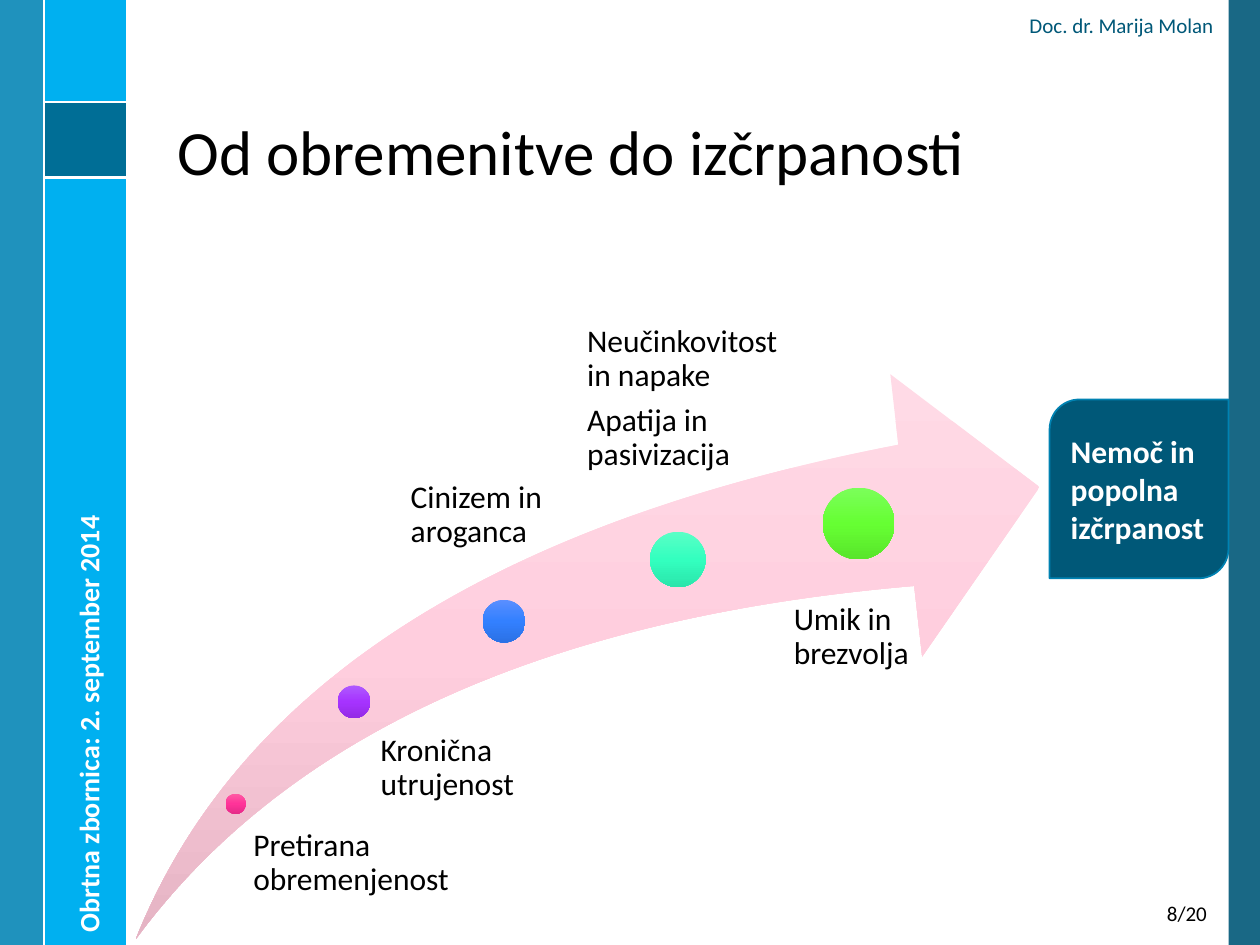
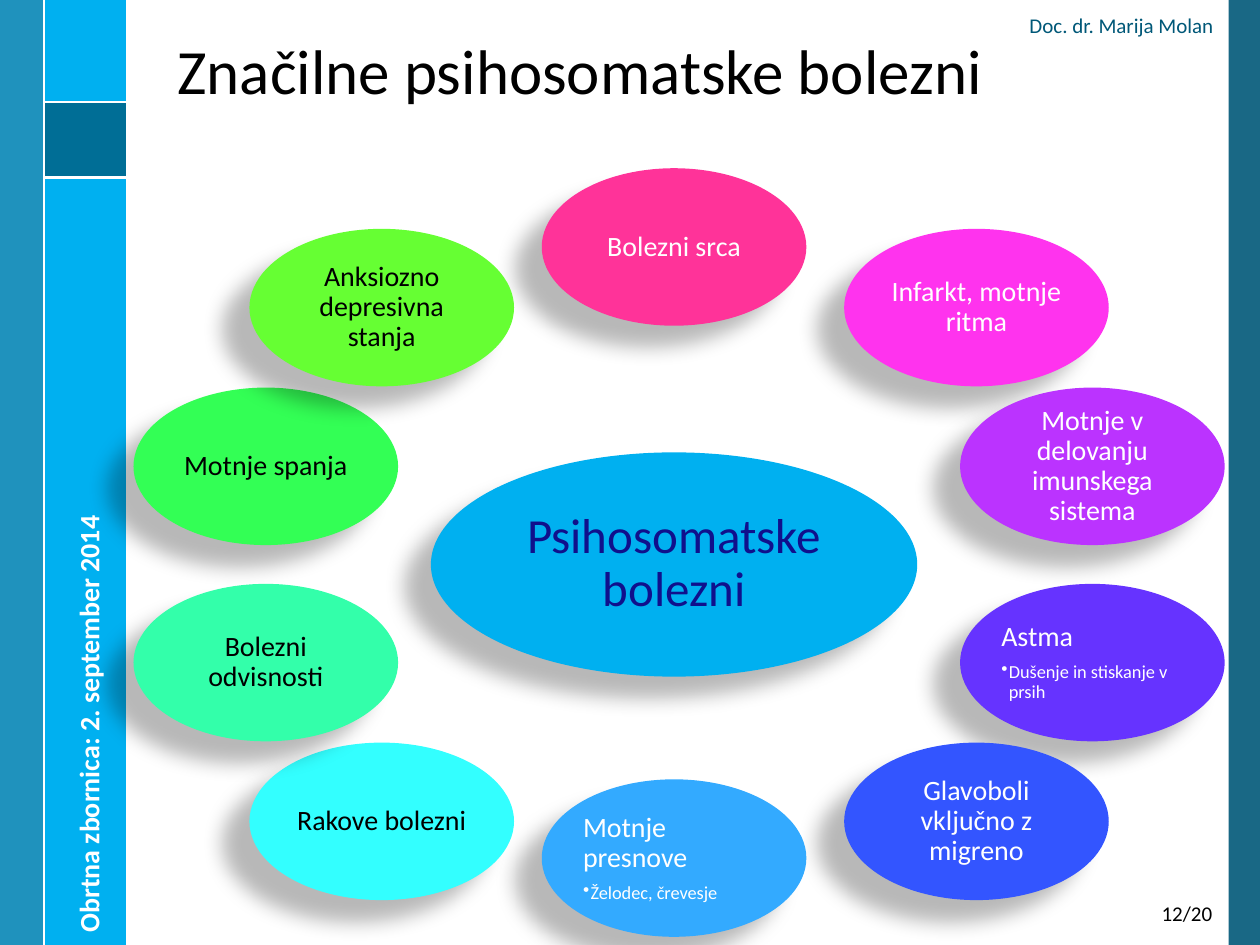
from dataclasses import dataclass
from math import cos, radians
from typing import NamedTuple

from lxml.etree import SubElement
from pptx import Presentation
from pptx.dml.color import RGBColor
from pptx.enum.shapes import MSO_CONNECTOR, MSO_SHAPE
from pptx.enum.text import MSO_ANCHOR as Anchor, PP_ALIGN as Align
from pptx.oxml.ns import qn
from pptx.util import Inches, Pt

FONT = "Calibri"
BLACK = RGBColor(0x00, 0x00, 0x00)
WHITE = RGBColor(0xFF, 0xFF, 0xFF)
DEEP_TEAL = RGBColor(0x00, 0x58, 0x78)
TEAL = RGBColor(0x00, 0x84, 0xB4)
TEAL_EDGE = RGBColor(0x00, 0x82, 0xB2)
SKY = RGBColor(0x00, 0xB0, 0xF0)
NAVY = RGBColor(0x10, 0x10, 0x8C)
Gradient = tuple[str, str, str]
ARROW_GRADIENT: Gradient = ("FFDAE6", "FFCEDE", "E5B4C4")
PAGE_COUNT = 20


class Box(NamedTuple):
    left: float
    top: float
    width: float
    height: float

    def lengths(self) -> list:
        return [Inches(value) for value in self]


class Band(NamedTuple):
    box: Box
    color: RGBColor
    opacity: int


class Rule(NamedTuple):
    x1: float
    y1: float
    x2: float
    y2: float


@dataclass
class Stage:
    """A dot on the arrow with its label."""
    dot_left: float
    dot_top: float
    dot_size: float
    gradient: Gradient
    label: Box
    inset: float
    texts: list[str]


@dataclass
class Disease:
    """An oval around the central theme."""
    text: str
    fill: RGBColor
    color: RGBColor = WHITE
    detail: str = ""


BANDS = [
    Band(Box(9.75, 0, 0.25, 7.5), DEEP_TEAL, 90),
    Band(Box(0.35, 0, 0.65, 7.5), SKY, 100),
    Band(Box(0, 0, 0.35, 7.5), TEAL, 88),
    Band(Box(0.35, 0.81, 0.65, 0.61), DEEP_TEAL, 75),
]
RULES = [Rule(0.35, 0.81, 1.01, 0.81), Rule(0.35, 1.41, 1.01, 1.41), Rule(0.35, 0, 0.35, 7.5)]

STAGES = [
    Stage(1.79, 6.3, 0.16, ("FF5AA4", "FF3399", "E52B88"),
          Box(1.92, 6.58, 1.68, 0.83), 0.09, ["Pretirana obremenjenost"]),
    Stage(2.68, 5.44, 0.26, ("AF5AFF", "A633FF", "942BE5"),
          Box(2.88, 5.83, 1.45, 1.38), 0.14, ["Kronična utrujenost"]),
    Stage(3.83, 4.76, 0.34, ("5A8FFF", "3380FF", "2B71E5"),
          Box(3.08, 3.82, 1.38, 2.52), 0.18, ["Cinizem in aroganca"]),
    Stage(5.16, 4.22, 0.44, ("5AFFC6", "33FFBF", "2BE5AB"),
          Box(4.42, 2.58, 1.89, 1.55), 0.24,
          ["Neučinkovitost in napake", "Apatija in pasivizacija"]),
    Stage(6.53, 3.87, 0.57, ("7BFF5A", "66FF33", "59E52B"),
          Box(6, 4.79, 1.43, 1.46), 0.3, ["Umik in brezvolja"]),
]

# Clockwise from the top
DISEASES = [
    Disease("Bolezni srca", RGBColor(0xFF, 0x33, 0x99)),
    Disease("Infarkt, motnje ritma", RGBColor(0xFF, 0x33, 0xEE)),
    Disease("Motnje v delovanju imunskega sistema", RGBColor(0xBB, 0x33, 0xFF)),
    Disease("Astma", RGBColor(0x66, 0x33, 0xFF), detail="Dušenje in stiskanje v prsih"),
    Disease("Glavoboli vključno z migreno", RGBColor(0x33, 0x55, 0xFF)),
    Disease("Motnje presnove", RGBColor(0x33, 0xAA, 0xFF), detail="Želodec, črevesje"),
    Disease("Rakove bolezni", RGBColor(0x33, 0xFF, 0xFF), BLACK),
    Disease("Bolezni odvisnosti", RGBColor(0x33, 0xFF, 0xAA), BLACK),
    Disease("Motnje spanja", RGBColor(0x33, 0xFF, 0x55), BLACK),
    Disease("Anksiozno depresivna stanja", RGBColor(0x66, 0xFF, 0x33), BLACK),
]
RING_X, RING_Y = 5.35, 4.48
RING_HEIGHT = 2.52
RING_OFFSETS = [0, 2.4, 3.32, 3.32, 2.4, 0, -2.32, -3.24, -3.24, -2.32]
LOWEST_CENTER = 6.81
OVAL_WIDTH, OVAL_HEIGHT = 2.1, 1.25


def add_plain_shape(slide, kind, box: Box, fill: RGBColor | None = None, opacity: int = 100):
    shape = slide.shapes.add_shape(kind, *box.lengths())
    shape.shadow.inherit = False
    shape.line.fill.background()
    if fill is not None:
        shape.fill.solid()
        shape.fill.fore_color.rgb = fill
        if opacity < 100:
            color = shape._element.spPr.find(".//" + qn("a:srgbClr"))
            SubElement(color, qn("a:alpha"), val=str(opacity * 1000))
    return shape


def set_gradient(shape, colors: Gradient) -> None:
    shape.fill.gradient()
    shape.fill.gradient_angle = 270
    stops = shape._element.spPr.find(".//" + qn("a:gsLst"))
    for stop in list(stops):
        stops.remove(stop)
    for position, color in zip((0, 50, 100), colors):
        stop = SubElement(stops, qn("a:gs"), pos=str(position * 1000))
        SubElement(stop, qn("a:srgbClr"), val=color)


def add_soft_shadow(shape) -> None:
    effects = shape._element.spPr.find(qn("a:effectLst"))
    shadow = SubElement(effects, qn("a:outerShdw"), blurRad=str(Pt(11.8)), dist=str(Pt(19.7)),
                        dir=str(141 * 60000), algn="tl", rotWithShape="0")
    color = SubElement(shadow, qn("a:srgbClr"), val=str(BLACK))
    SubElement(color, qn("a:alpha"), val="28000")


def set_insets(frame, left: float, top: float, right: float, bottom: float) -> None:
    frame.margin_left, frame.margin_top = Inches(left), Inches(top)
    frame.margin_right, frame.margin_bottom = Inches(right), Inches(bottom)


def style_paragraph(paragraph, size: float, color: RGBColor, align=Align.LEFT,
                    bold: bool = False, spacing: float = 1, after: float = 0) -> None:
    """Space after is a share of the font size."""
    paragraph.alignment = align
    paragraph.line_spacing = spacing
    paragraph.space_after = Pt(size * after)
    font = paragraph.font
    font.name, font.size, font.bold = FONT, Pt(size), bold
    font.color.rgb = color


def fill_text(shape, texts: list[str], size: float, color: RGBColor, anchor=Anchor.MIDDLE, **style):
    frame = shape.text_frame
    frame.word_wrap = True
    frame.vertical_anchor = anchor
    frame.text = "\n".join(texts)
    for paragraph in frame.paragraphs:
        style_paragraph(paragraph, size, color, **style)
    return frame


def add_text(slide, box: Box, texts: list[str], size: float, color: RGBColor, **style):
    shape = slide.shapes.add_textbox(*box.lengths())
    fill_text(shape, texts, size, color, **style)
    return shape


def add_rule(slide, rule: Rule) -> None:
    connector = slide.shapes.add_connector(
        MSO_CONNECTOR.STRAIGHT, *(Inches(value) for value in rule))
    connector.line.color.rgb = WHITE
    connector.line.width = Pt(1.5)
    SubElement(connector._element.spPr, qn("a:effectLst"))


def add_framed_slide(presentation, title: str, title_height: float, number: int):
    """Blank slide with bands, title, event, author and page number."""
    slide = presentation.slides.add_slide(presentation.slide_layouts[6])
    for band in BANDS:
        add_plain_shape(slide, MSO_SHAPE.RECTANGLE, band.box, band.color, band.opacity)
    for rule in RULES:
        add_rule(slide, rule)
    add_text(slide, Box(1.31, 0.19, 8.03, title_height), [title], 36, BLACK,
             anchor=Anchor.BOTTOM, spacing=0.9)
    add_text(slide, Box(3.98, 0, 5.75, 0.4), ["Doc. dr. Marija Molan"], 12, DEEP_TEAL,
             align=Align.RIGHT)
    add_text(slide, Box(9.09, 7.1, 0.66, 0.4), [f"{number}/{PAGE_COUNT}"], 12, BLACK,
             anchor=Anchor.TOP, align=Align.CENTER)
    return slide


def add_event_name(slide) -> None:
    event = add_text(slide, Box(-1.49, 5.11, 4.38, 0.4),
                     ["Obrtna zbornica: 2. september 2014"], 16, WHITE, bold=True)
    event.rotation = 270


def add_stage(slide, stage: Stage) -> None:
    dot = add_plain_shape(slide, MSO_SHAPE.OVAL,
                          Box(stage.dot_left, stage.dot_top, stage.dot_size, stage.dot_size))
    set_gradient(dot, stage.gradient)
    label = add_text(slide, stage.label, stage.texts, 18, BLACK,
                     anchor=Anchor.TOP, spacing=0.9, after=0.35)
    set_insets(label.text_frame, stage.inset, 0, 0, 0)


def add_oval(slide, center_x: float, center_y: float, width: float, height: float,
             fill: RGBColor, text: str, size: float, color: RGBColor, inset: float,
             align=Align.CENTER):
    box = Box(center_x - width / 2, center_y - height / 2, width, height)
    oval = add_plain_shape(slide, MSO_SHAPE.OVAL, box, fill)
    add_soft_shadow(oval)
    frame = fill_text(oval, [text], size, color, align=align, spacing=0.9, after=0.35)
    set_insets(frame, inset, inset, inset, inset)
    return frame


def add_detail(frame, text: str, color: RGBColor) -> None:
    paragraph = frame.add_paragraph()
    paragraph.text = text
    paragraph.level = 1
    properties = paragraph._p.get_or_add_pPr()
    properties.set("marL", str(Inches(0.06)))
    properties.set("indent", str(Inches(-0.06)))
    SubElement(properties, qn("a:buChar"), char="•")
    style_paragraph(paragraph, 10.5, color, spacing=0.9, after=0.15)


def build_exhaustion_slide(presentation) -> None:
    slide = add_framed_slide(presentation, "Od obremenitve do izčrpanosti", 1.36, 8)
    arrow = add_plain_shape(slide, MSO_SHAPE.SWOOSH_ARROW, Box(1.08, 2.97, 7.17, 4.48))
    arrow.adjustments[0] = arrow.adjustments[1] = 0.25
    set_gradient(arrow, ARROW_GRADIENT)
    for stage in STAGES:
        add_stage(slide, stage)
    # Final state
    outcome = add_plain_shape(slide, MSO_SHAPE.ROUND_2_DIAG_RECTANGLE,
                              Box(8.33, 3.17, 1.42, 1.42), DEEP_TEAL)
    outcome.line.color.rgb = TEAL_EDGE
    outcome.line.width = Pt(1)
    fill_text(outcome, ["Nemoč in popolna izčrpanost"], 18, WHITE, bold=True)
    add_event_name(slide)


def build_diseases_slide(presentation) -> None:
    slide = add_framed_slide(presentation, "Značilne psihosomatske bolezni", 0.72, 12)
    add_oval(slide, RING_X, RING_Y, 3.86, 1.78, SKY, "Psihosomatske bolezni", 28, NAVY, 0.04)
    step = 360 / len(DISEASES)
    for index, (disease, offset) in enumerate(zip(DISEASES, RING_OFFSETS)):
        center_y = min(RING_Y - RING_HEIGHT * cos(radians(index * step)), LOWEST_CENTER)
        align = Align.LEFT if disease.detail else Align.CENTER
        frame = add_oval(slide, RING_X + offset, center_y, OVAL_WIDTH, OVAL_HEIGHT,
                         disease.fill, disease.text, 16, disease.color, 0.02, align)
        if disease.detail:
            add_detail(frame, disease.detail, disease.color)
    add_event_name(slide)


def main() -> None:
    presentation = Presentation()
    presentation.slide_width, presentation.slide_height = Inches(10), Inches(7.5)
    build_exhaustion_slide(presentation)
    build_diseases_slide(presentation)
    presentation.save("out.pptx")


if __name__ == "__main__":
    main()
